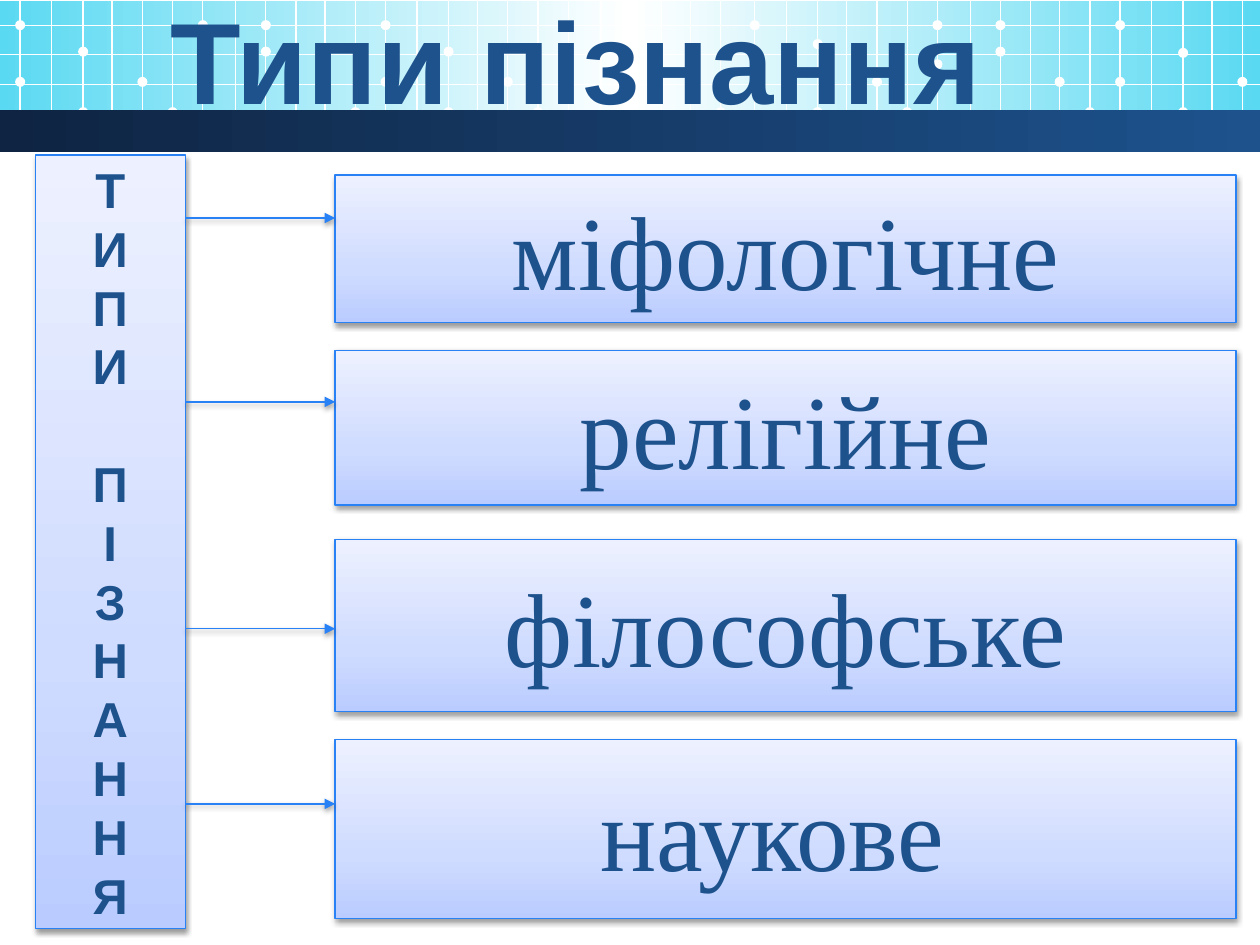
from copy import deepcopy
from dataclasses import dataclass

from lxml import etree
from pptx import Presentation
from pptx import util as u
from pptx.dml.color import RGBColor
from pptx.enum import shapes, text
from pptx.oxml import ns

CELL = 0.1


@dataclass(frozen=True)
class Theme:
    ink: str = "1D528D"
    edge: str = "2981F6"
    grid: str = "FFFFFF"
    sky: tuple = ((0, "5AD9F2"), (0.5, "FFFFFF"), (1, "5AD9F2"))
    strip: tuple = ((0, "0F2442"), (1, "1D528D"))
    panel: tuple = ((0, "BACCFF"), (0.35, "CFDBFF"), (1, "EDF1FF"))
    hairline: float = 0.75
    heading: tuple = ("Arial", 66, True)
    label: tuple = ("Arial", 28, True)
    kind: tuple = ("Times New Roman", 60, False)
    leading: float = 33.6


@dataclass(frozen=True)
class Box:
    left: float
    top: float
    width: float
    height: float

    def inner(self, x, y, width, height):
        return Box(self.left + x, self.top + y, width, height)

    def emu(self):
        return [u.Inches(v * CELL) for v in (self.left, self.top, self.width, self.height)]


THEME = Theme()
HEADING = "Типи пізнання"
WORDS = ("ТИПИ", "ПІЗНАННЯ")
KINDS = (
    ("міфологічне", 1.6, 11.7, 5),
    ("релігійне", 15.5, 12.3, 19.6),
    ("філософське", 30.5, 13.7, 37.6),
    ("наукове ", 46.4, 14.2, 51.5),
)
MESH_STEPS = (0, 2.5, 5, 7.3, 9.7, 12.1, 14.5, 17.1, 19.5, 21.9, 24.2, 26.6)
MESH_ROWS = (2, 4.3, 6.7, 8.9)
MESH_PANELS = ((1.6, 4.1, 6.5), (30.6, 4.1, 4.3), (59.9, 3.5, 5.1), (88.9, 4.2, 6.5))


def set_all(target, values):
    for name, value in values.items():
        setattr(target, name, value)


def style(font, face):
    name, size, bold = face
    set_all(font, {"name": name, "size": u.Pt(size), "bold": bold})
    font.color.rgb = RGBColor.from_string(THEME.ink)


def shade(shape, stops, angle):
    shape.fill.gradient()
    shape.fill.gradient_angle = angle
    stop_list = shape._element.spPr.find(".//" + ns.qn("a:gsLst"))
    while len(stop_list) < len(stops):
        stop_list.append(deepcopy(stop_list[0]))
    for stop, (position, color) in zip(shape.fill.gradient_stops, stops):
        stop.position = position
        stop.color.rgb = RGBColor.from_string(color)


def outline(line, color):
    line.color.rgb = RGBColor.from_string(color)
    line.width = u.Pt(THEME.hairline)


def cast_shadow(effects):
    shadow = etree.SubElement(effects, ns.qn("a:outerShdw"), blurRad=str(u.Pt(3.1)),
                              dist=str(u.Pt(1.6)), dir="5400000", rotWithShape="0")
    color = etree.SubElement(shadow, ns.qn("a:srgbClr"), val="000000")
    etree.SubElement(color, ns.qn("a:alpha"), val="38000")


def add_plain(slide, box, preset=shapes.MSO_SHAPE.RECTANGLE):
    shape = slide.shapes.add_shape(preset, *box.emu())
    shape.shadow.inherit = False
    shape.line.fill.background()
    return shape


def add_line(slide, box, color):
    left, top, width, height = box.emu()
    line = slide.shapes.add_connector(shapes.MSO_CONNECTOR.STRAIGHT, left, top, left + width, top + height)
    outline(line.line, color)
    effects = etree.SubElement(line._element.spPr, ns.qn("a:effectLst"))
    return line, effects


def add_dot(slide, region, x, y):
    dot = add_plain(slide, region.inner(x - 0.4, y - 0.4, 0.8, 0.8), shapes.MSO_SHAPE.OVAL)
    dot.fill.solid()
    dot.fill.fore_color.rgb = RGBColor.from_string(THEME.grid)


def add_banner(slide, region):
    shade(add_plain(slide, region.inner(0, 0.1, region.width, 10.2)), THEME.sky, 0)
    for start, bend, dip in MESH_PANELS:
        knots = ((0, 6.5), (0, 2), (2, bend), (2, 8.9), (4, 6.5), (5, 8.9), (6, dip), (6, 2),
                 (8, 4.1), (8, 2), (10, 6.5), (11, 8.9))
        columns = [start + step for step in MESH_STEPS if start + step < region.width]
        for x in columns:
            add_line(slide, region.inner(x, 0, 0, 11), THEME.grid)
        for column, y in knots:
            if column < len(columns):
                add_dot(slide, region, columns[column], y)
    for y in MESH_ROWS:
        add_line(slide, region.inner(0, y, region.width, 0), THEME.grid)
    shade(add_plain(slide, region.inner(0, 8.75, region.width, 3.3)), THEME.strip, 0)


def add_heading(slide, region):
    heading = slide.shapes.title
    slide.shapes._spTree.append(heading._element)
    set_all(heading, dict(zip(("left", "top", "width", "height"), region.emu())))
    frame = heading.text_frame
    frame.text = HEADING
    set_all(frame, {"word_wrap": True, "auto_size": text.MSO_AUTO_SIZE.NONE,
                    "vertical_anchor": text.MSO_ANCHOR.BOTTOM, "margin_bottom": u.Inches(0.01)})
    frame.paragraphs[0].alignment = text.PP_ALIGN.CENTER
    style(frame.paragraphs[0].runs[0].font, THEME.heading)


def add_panel(slide, box, lines, face):
    panel = add_plain(slide, box)
    shade(panel, THEME.panel, 90)
    outline(panel.line, THEME.edge)
    cast_shadow(panel._element.spPr.find(ns.qn("a:effectLst")))
    frame = panel.text_frame
    set_all(frame, {"word_wrap": True, "vertical_anchor": text.MSO_ANCHOR.MIDDLE,
                    "margin_top": 0, "margin_bottom": 0})
    frame.text = "\n".join(lines)
    for paragraph in frame.paragraphs:
        paragraph.alignment = text.PP_ALIGN.CENTER
        style(paragraph.runs[0].font, face)
    return frame.paragraphs


def add_scheme(slide, region):
    stem = 11.9
    branch = 23.8
    letters = add_panel(slide, region.inner(0, 0, stem, region.height), "".join(WORDS), THEME.label)
    for letter in letters:
        letter.line_spacing = u.Pt(THEME.leading)
    letters[len(WORDS[0])].space_before = u.Pt(THEME.leading)
    for kind, top, height, arrow_row in KINDS:
        add_panel(slide, region.inner(branch, top, region.width - branch, height), [kind], THEME.kind)
        arrow, effects = add_line(slide, region.inner(stem, arrow_row, branch - stem, 0), THEME.edge)
        cast_shadow(effects)
        stroke = arrow._element.spPr.find(ns.qn("a:ln"))
        etree.SubElement(stroke, ns.qn("a:tailEnd"), type="triangle")


def main():
    deck = Presentation()
    set_all(deck, {"slide_width": u.Inches(10), "slide_height": u.Inches(7.5)})
    slide = deck.slides.add_slide(deck.slide_layouts[5])
    add_banner(slide, Box(0, 0, 100, 12.1))
    add_heading(slide, Box(-3.5, -1.9, 98.4, 12.1))
    add_scheme(slide, Box(2.8, 12.3, 95.3, 61.4))
    deck.save("out.pptx")


if __name__ == "__main__":
    main()
